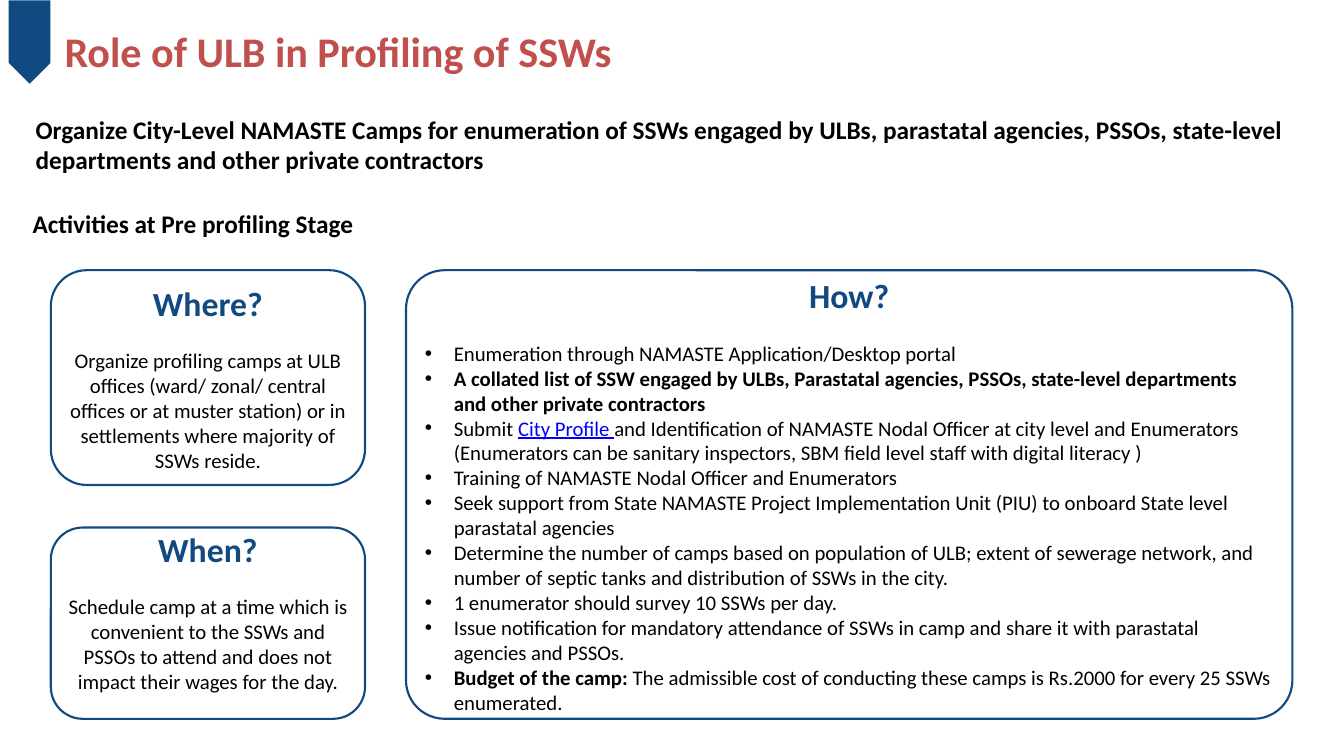
from lxml import etree
from pptx import Presentation
from pptx import util as u
from pptx.dml.color import RGBColor
from pptx.enum import shapes, text
from pptx.oxml.ns import qn

PX = 9144
NAVY, RED, BLACK, BLUE = "114A81", "C0504D", "000000", "0000FF"


def rgb(hex_value):
    return RGBColor.from_string(hex_value)


def add_run(paragraph, words, size, color=BLACK, **extra):
    run = paragraph.add_run()
    run.text = words
    run.font.color.rgb = rgb(color)
    for key, value in {"name": "Calibri", "size": u.Pt(size), "bold": False, **extra}.items():
        setattr(run.font, key, value)


deck = Presentation()
deck.slide_width, deck.slide_height = 1771 * PX, 996 * PX
slide = deck.slides.add_slide(deck.slide_layouts[1])
title, body = slide.placeholders

MIDDLE = {"word_wrap": True, "auto_size": text.MSO_AUTO_SIZE.NONE,
          "vertical_anchor": text.MSO_ANCHOR.MIDDLE}

for holder, box, insets in (
    (title, (74, 23, 1582, 87), (11, 6, 11, 6)),
    (body, (560, 356, 1118, 591), (0, 0, 0, 0)),
):
    holder.left, holder.top, holder.width, holder.height = (n * PX for n in box)
    for side, inset in zip(("left", "top", "right", "bottom"), insets):
        setattr(holder.text_frame, f"margin_{side}", inset * PX)
    for key, value in MIDDLE.items():
        setattr(holder.text_frame, key, value)

heading = title.text_frame.paragraphs[0]
heading.alignment = text.PP_ALIGN.LEFT
add_run(heading, "Role of ULB in Profiling of SSWs", 40, RED, bold=True)

ribbon = slide.shapes.add_shape(shapes.MSO_SHAPE.PENTAGON, *(n * PX for n in (-16, 28, 110, 55)))
ribbon.rotation = 90
ribbon.shadow.inherit = False
ribbon.fill.solid()
ribbon.fill.fore_color.rgb = rgb(NAVY)
ribbon.line.fill.background()

for words, box in (
    ("Organize City-Level NAMASTE Camps for enumeration of SSWs engaged by ULBs, parastatal "
     "agencies, PSSOs, state-level departments and other private contractors", (37, 145, 1678, 91)),
    ("Activities at Pre profiling Stage", (33, 269, 448, 50)),
):
    intro = slide.shapes.add_textbox(*(n * PX for n in box)).text_frame
    intro.word_wrap = True
    add_run(intro.paragraphs[0], words, 24, bold=True)

for question, answer, box, corner, top_inset, bottom_inset in (
    ("Where?", "Organize profiling camps at ULB offices (ward/ zonal/ central offices or at muster "
     "station) or in settlements where majority of SSWs reside.", (67, 356, 414, 283), 0.167, 5, 5),
    ("When?", "Schedule camp at a time which is convenient to the SSWs and PSSOs to attend and "
     "does not impact their wages for the day.", (67, 695, 414, 252), 0.167, 0, 32),
    ("How?", None, (535, 356, 1168, 591), 0.086, 0, 0),
):
    card = slide.shapes.add_shape(shapes.MSO_SHAPE.ROUNDED_RECTANGLE, *(n * PX for n in box))
    card.adjustments[0] = corner
    card.shadow.inherit = False
    card.fill.background()
    card.line.color.rgb = rgb(NAVY)
    card.line.width = u.Pt(2)
    frame = card.text_frame if answer else body.text_frame
    for key, value in {**MIDDLE, "margin_top": top_inset * PX, "margin_bottom": bottom_inset * PX}.items():
        setattr(frame, key, value)
    asked = frame.paragraphs[0]
    for key, value in {"alignment": text.PP_ALIGN.CENTER, "space_before": u.Pt(0),
                       "space_after": u.Pt(24)}.items():
        setattr(asked, key, value)
    add_run(asked, question, 32, NAVY, bold=True)
    if answer:
        reply = frame.add_paragraph()
        reply.alignment = text.PP_ALIGN.CENTER
        add_run(reply, answer, 19.7)
    else:
        properties = asked._p.get_or_add_pPr()
        properties.set("marL", "0")
        properties.set("indent", "0")
        etree.SubElement(properties, qn("a:buNone"))

STRONG = {"bold": True}
LINK = {"color": BLUE, "underline": True}
steps = [
    [("Enumeration through NAMASTE Application/Desktop portal", {})],
    [("A collated list of SSW engaged by ULBs, Parastatal agencies, PSSOs, state-level departments "
      "and other private contractors", STRONG)],
    [("Submit ", {}), ("City Profile ", LINK),
     ("and Identification of NAMASTE Nodal Officer at city level and Enumerators (Enumerators can "
      "be sanitary inspectors, SBM field level staff with digital literacy )", {})],
    [("Training of NAMASTE Nodal Officer and Enumerators", {})],
    [("Seek support from State NAMASTE Project Implementation Unit (PIU) to onboard State level "
      "parastatal agencies", {})],
    [("Determine the number of camps based on population of ULB; extent of sewerage network, and "
      "number of septic tanks and distribution of SSWs in the city.", {})],
    [("1 enumerator should survey 10 SSWs per day.", {})],
    [("Issue notification for mandatory attendance of SSWs in camp and share it with parastatal "
      "agencies and PSSOs.", {})],
    [("Budget of the camp: ", STRONG),
     ("The admissible cost of conducting these camps is Rs.2000 for every 25 SSWs enumerated.", {})],
]
for step in steps:
    item = body.text_frame.add_paragraph()
    item.space_before = u.Pt(0)
    properties = item._p.get_or_add_pPr()
    properties.set("marL", str(38 * PX))
    properties.set("indent", str(-38 * PX))
    bullet_color = etree.SubElement(properties, qn("a:buClr"))
    etree.SubElement(bullet_color, qn("a:srgbClr"), val=BLACK)
    etree.SubElement(properties, qn("a:buFont"), typeface="Arial")
    etree.SubElement(properties, qn("a:buChar"), char="•")
    for words, look in step:
        add_run(item, words, 19.7, **look)

deck.save("out.pptx")
